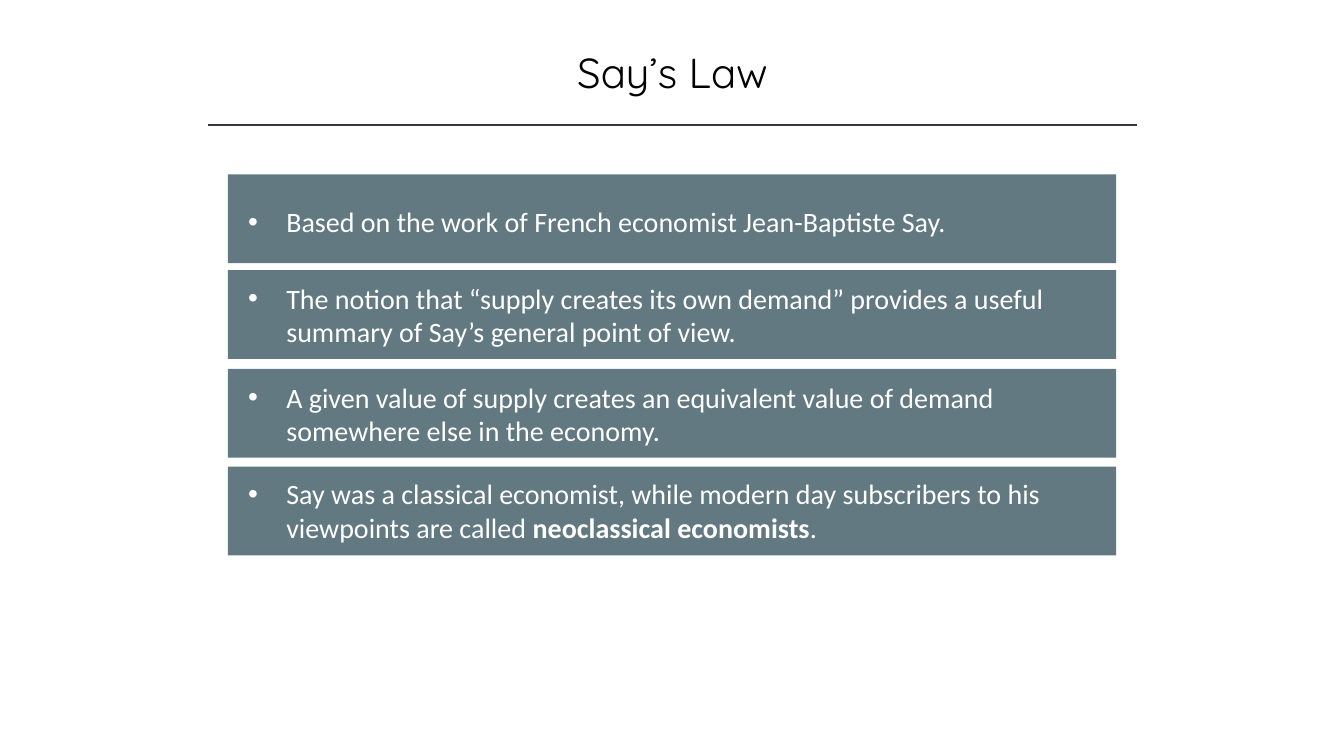
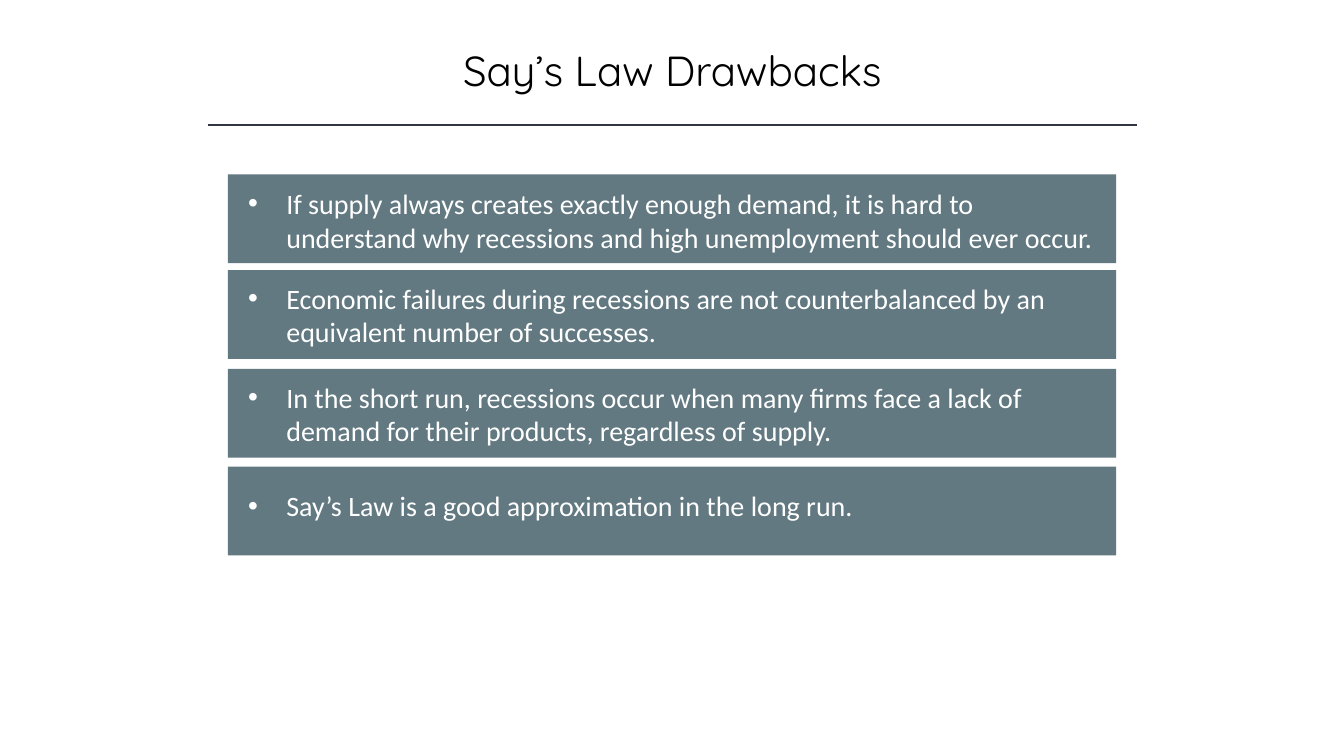
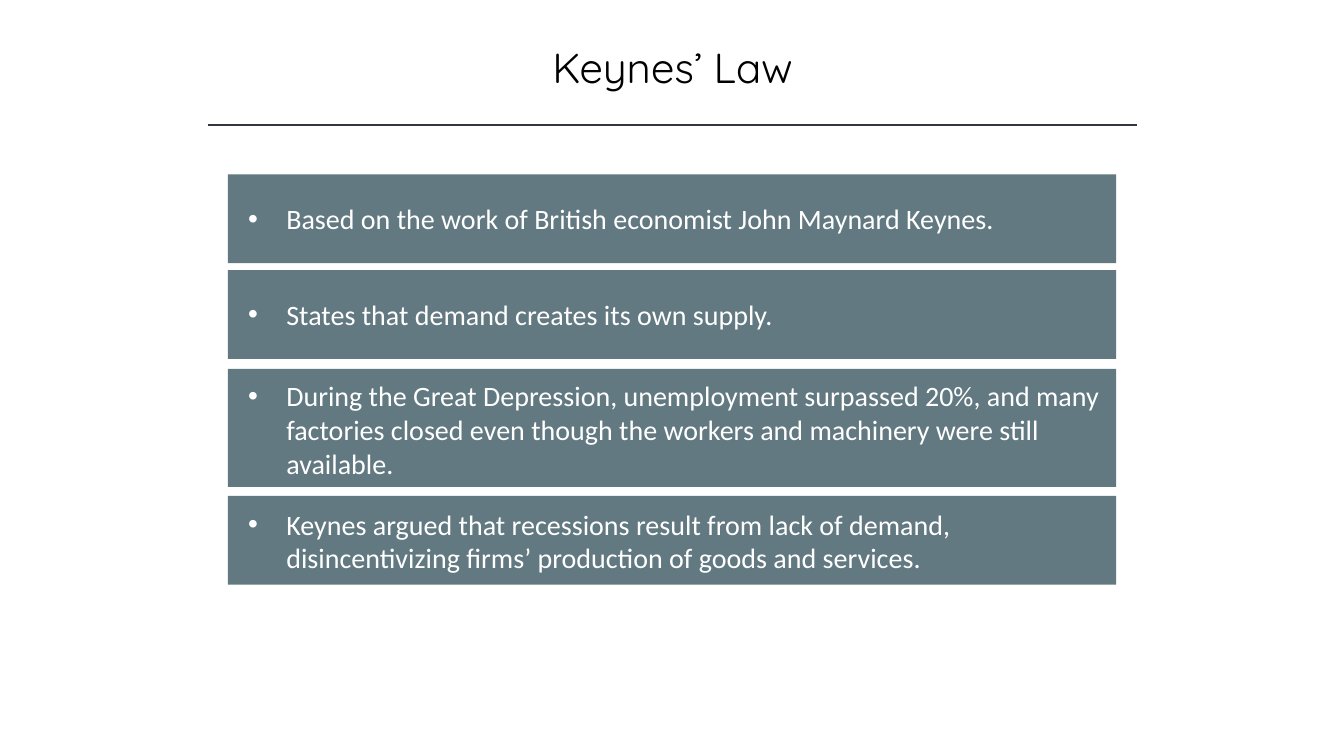
import pptx
import pptx.util
import pptx.dml.color
import pptx.enum.shapes
import pptx.enum.text
import pptx.oxml
import pptx.oxml.ns
from lxml import etree

Inches = pptx.util.Inches
Pt = pptx.util.Pt
qn = pptx.oxml.ns.qn


def paint(color, code):
    color.rgb = pptx.dml.color.RGBColor.from_string(code)


def style(item, values):
    for name, value in values.items():
        setattr(item, name, value)


SLATE, WHITE, BLACK, INK = "627981", "FFFFFF", "000000", "323542"
LEFT, WIDTH, FIRST = 2.26, 8.81, 1.73
GAPS = [0.07, 0.1, 0.09, 0]
SHORT, TALL = 0.88, 1.17

head_frame = {
    "word_wrap": True,
    "margin_left": Inches(0.05), "margin_right": Inches(0.05),
    "margin_top": Inches(0.05), "margin_bottom": Inches(0.05),
}
head_font = {"name": "Quicksand", "size": Pt(30)}
bar_frame = {
    "word_wrap": True,
    "vertical_anchor": pptx.enum.text.MSO_ANCHOR.TOP,
    "margin_left": Inches(0.2), "margin_right": Inches(0.1),
    "margin_bottom": Inches(0.05),
}
bar_font = {"name": "Calibri", "size": Pt(20)}

pages = [
    ("Say’s Law", 0.41, [
        (SHORT, 0.3, ["Based on the work of French economist Jean-Baptiste Say."]),
        (SHORT, 0.11, ["The notion that “supply creates its own demand” provides a useful "
                       "summary of Say’s general point of view."]),
        (SHORT, 0.11, ["A given value of supply creates an equivalent value of demand "
                       "somewhere else in the economy."]),
        (SHORT, 0.1, ["Say was a classical economist, while modern day subscribers to his "
                      "viewpoints are called ", "neoclassical economists", "."]),
    ]),
    ("Say’s Law Drawbacks", 0.39, [
        (SHORT, 0.12, ["If supply always creates exactly enough demand, it is hard to "
                       "understand why recessions and high unemployment should ever occur."]),
        (SHORT, 0.11, ["Economic failures during recessions are not counterbalanced by an "
                       "equivalent number of successes."]),
        (SHORT, 0.11, ["In the short run, recessions occur when many firms face a lack of "
                       "demand for their products, regardless of supply."]),
        (SHORT, 0.22, ["Say’s Law is a good approximation in the long run."]),
    ]),
    ("Keynes’ Law", 0.36, [
        (SHORT, 0.27, ["Based on the work of British economist John Maynard Keynes."]),
        (SHORT, 0.27, ["States that demand creates its own supply."]),
        (TALL, 0.1, ["During the Great Depression, unemployment surpassed 20%, and many "
                     "factories closed even though the workers and machinery were still "
                     "available."]),
        (SHORT, 0.11, ["Keynes argued that recessions result from lack of demand, "
                       "disincentivizing firms’ production of goods and services."]),
    ]),
]

deck = pptx.Presentation()
style(deck, {"slide_width": Inches(13.33), "slide_height": Inches(7.5)})

for title, height, bars in pages:
    slide = deck.slides.add_slide(deck.slide_layouts[6])
    fill = slide.background.fill
    fill.solid()
    paint(fill.fore_color, WHITE)

    rule = slide.shapes.add_connector(
        pptx.enum.shapes.MSO_CONNECTOR.STRAIGHT,
        Inches(2.06), Inches(1.24), Inches(11.28), Inches(1.24))
    rule.line.width = Pt(1)
    paint(rule.line.color, INK)
    etree.SubElement(rule._element.spPr, qn("a:effectLst"))

    head = slide.shapes.add_textbox(Inches(1.72), Inches(height), Inches(9.9), Inches(0.61))
    style(head.text_frame, head_frame)
    para = head.text_frame.paragraphs[0]
    para.alignment = pptx.enum.text.PP_ALIGN.CENTER
    run = para.add_run()
    run.text = title
    style(run.font, head_font)
    paint(run.font.color, BLACK)

    top = FIRST
    for (tall, pad, parts), gap in zip(bars, GAPS):
        bar = slide.shapes.add_shape(
            pptx.enum.shapes.MSO_SHAPE.RECTANGLE,
            Inches(LEFT), Inches(top), Inches(WIDTH), Inches(tall))
        bar.shadow.inherit = False
        bar.fill.solid()
        paint(bar.fill.fore_color, SLATE)
        bar.line.fill.background()
        style(bar.text_frame, bar_frame)
        bar.text_frame.margin_top = Inches(pad)

        para = bar.text_frame.paragraphs[0]
        para.alignment = pptx.enum.text.PP_ALIGN.LEFT
        props = para._p.get_or_add_pPr()
        props.set("marL", str(Inches(0.38)))
        props.set("indent", str(-Inches(0.38)))
        tint = etree.SubElement(props, qn("a:buClr"))
        etree.SubElement(tint, qn("a:srgbClr"), val=WHITE)
        etree.SubElement(props, qn("a:buFont"), typeface="Arial")
        etree.SubElement(props, qn("a:buChar"), char="•")

        for place, text in enumerate(parts):
            run = para.add_run()
            run.text = text
            style(run.font, bar_font)
            run.font.bold = place == 1
            paint(run.font.color, WHITE)
        top += tall + gap

deck.save("out.pptx")
